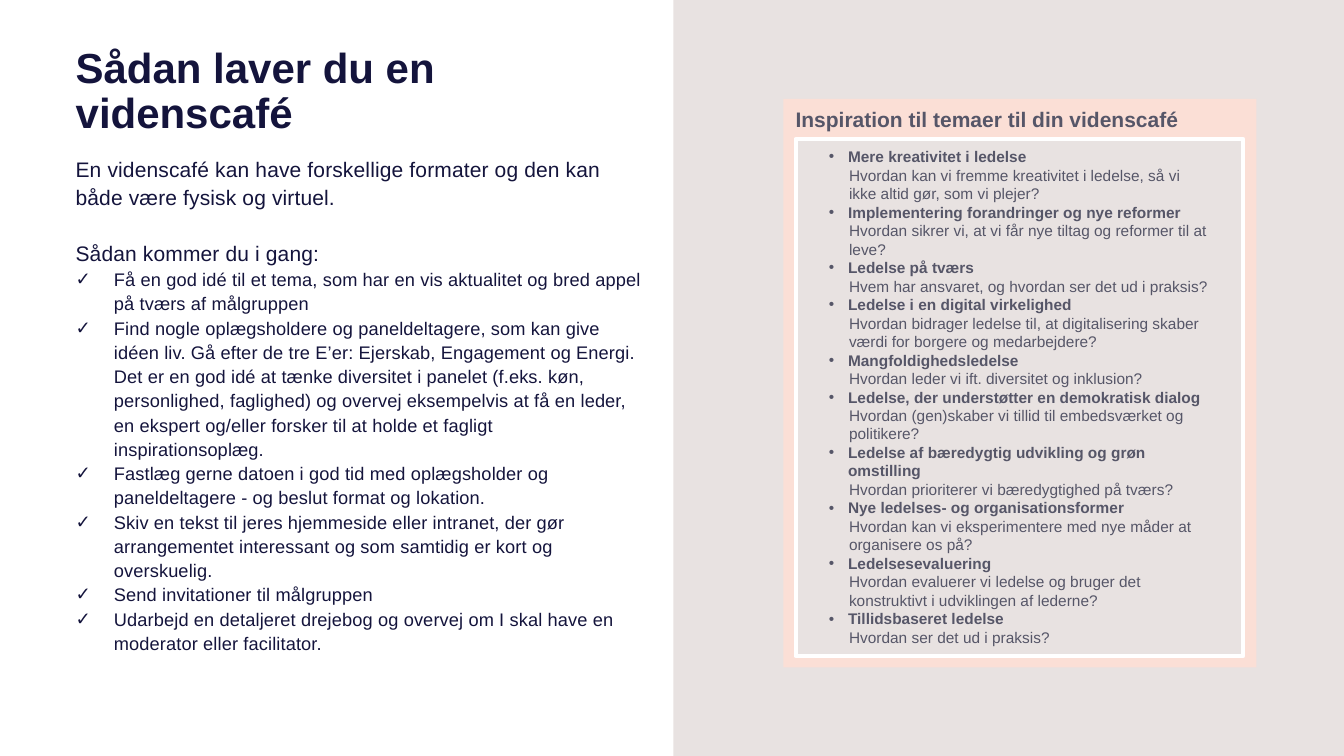
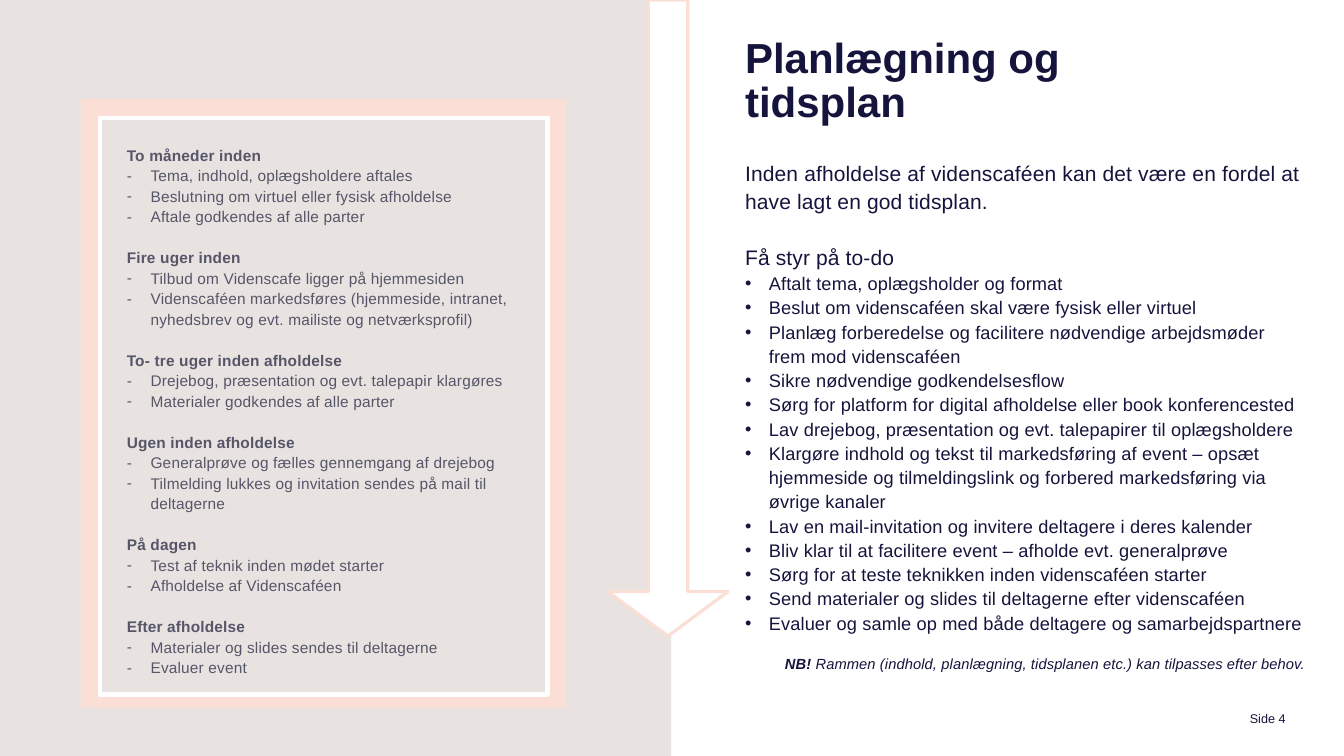
"""Build two slides on how to plan and run a knowledge café."""
from dataclasses import dataclass
from lxml.etree import SubElement
from pptx import Presentation
from pptx.dml.color import RGBColor as RGB
from pptx.enum.shapes import MSO_SHAPE as SHAPE
from pptx.enum.text import MSO_ANCHOR as ANCHOR, PP_ALIGN as ALIGN
from pptx.oxml.ns import qn
from pptx.util import Inches, Pt


@dataclass(frozen=True)
class Theme:
    font: str = "Arial"
    navy: str = "14143C"
    grey: str = "565668"
    sand: str = "E8E2E1"
    pink: str = "FBDFD6"
    white: str = "FFFFFF"
    title: float = 30
    lead: float = 15
    body: float = 13
    small: float = 11
    note: float = 10.5
    footer: float = 9
    tight: float = 0.89
    loose: float = 1.11


T = Theme()
prs = Presentation()
prs.slide_width, prs.slide_height = Inches(13.33), Inches(7.5)
COL, ROW = prs.slide_width / 100, prs.slide_height / 100


def add_box(s, at, fill=None, line=None, width=3, kind=SHAPE.RECTANGLE, inset=0):
    """Add a shape placed in hundredths of the slide."""
    x, y, w, h = at
    sp = s.shapes.add_shape(kind, round(x * COL), round(y * ROW), round(w * COL), round(h * ROW))
    sp.shadow.inherit = False
    if fill:
        sp.fill.solid()
        sp.fill.fore_color.rgb = RGB.from_string(fill)
    else:
        sp.fill.background()
    if line:
        sp.line.color.rgb = RGB.from_string(line)
        sp.line.width = Pt(width)
    else:
        sp.line.fill.background()
    tf = sp.text_frame
    tf.word_wrap = True
    tf.vertical_anchor = ANCHOR.TOP
    tf.margin_left = tf.margin_right = Inches(2 * inset)
    tf.margin_top = tf.margin_bottom = Inches(inset)
    return sp


def add_par(sp, runs, size, color=T.navy, spacing=T.loose, before=0, bullet=None,
            left=0, hang=0, align=ALIGN.LEFT, track=0):
    """Add a paragraph of (text, bold, italic) runs; indents are in columns."""
    tf = sp.text_frame
    p = tf.paragraphs[0] if not tf.paragraphs[0].runs else tf.add_paragraph()
    p.alignment, p.line_spacing = align, spacing
    if before:
        p.space_before = Pt(before)
    pPr = p._p.get_or_add_pPr()
    pPr.set("marL", str(round(left * COL)))
    pPr.set("indent", str(round(-hang * COL)))
    if bullet:
        SubElement(pPr, qn("a:buFont")).set("typeface", T.font)
        SubElement(pPr, qn("a:buChar")).set("char", bullet)
    for text, bold, italic in runs:
        r = p.add_run()
        r.text = text
        r.font.name, r.font.size = T.font, Pt(size)
        r.font.bold, r.font.italic = bold, italic
        r.font.color.rgb = RGB.from_string(color)
        if track:
            r.font._element.set("spc", str(track))


themes = [
    ("Mere kreativitet i ledelse",
     "Hvordan kan vi fremme kreativitet i ledelse, så vi ikke altid gør, som vi plejer?"),
    ("Implementering forandringer og nye reformer",
     "Hvordan sikrer vi, at vi får nye tiltag og reformer til at leve?"),
    ("Ledelse på tværs", "Hvem har ansvaret, og hvordan ser det ud i praksis?"),
    ("Ledelse i en digital virkelighed",
     "Hvordan bidrager ledelse til, at digitalisering skaber værdi for borgere og medarbejdere?"),
    ("Mangfoldighedsledelse", "Hvordan leder vi ift. diversitet og inklusion?"),
    ("Ledelse, der understøtter en demokratisk dialog",
     "Hvordan (gen)skaber vi tillid til embedsværket og politikere?"),
    ("Ledelse af bæredygtig udvikling og grøn omstilling",
     "Hvordan prioriterer vi bæredygtighed på tværs?"),
    ("Nye ledelses- og organisationsformer",
     "Hvordan kan vi eksperimentere med nye måder at organisere os på?"),
    ("Ledelsesevaluering",
     "Hvordan evaluerer vi ledelse og bruger det konstruktivt i udviklingen af lederne?"),
    ("Tillidsbaseret ledelse", "Hvordan ser det ud i praksis?"),
]
schedule = [
    ("To måneder inden", [
        "Tema, indhold, oplægsholdere aftales",
        "Beslutning om virtuel eller fysisk afholdelse",
        "Aftale godkendes af alle parter"]),
    ("Fire uger inden", [
        "Tilbud om Videnscafe ligger på hjemmesiden",
        "Videnscaféen markedsføres (hjemmeside, intranet, nyhedsbrev og evt. mailiste "
        "og netværksprofil)"]),
    ("To- tre uger inden afholdelse", [
        "Drejebog, præsentation og evt. talepapir klargøres",
        "Materialer godkendes af alle parter"]),
    ("Ugen inden afholdelse", [
        "Generalprøve og fælles gennemgang af drejebog",
        "Tilmelding lukkes og invitation sendes på mail til deltagerne"]),
    ("På dagen", [
        "Test af teknik inden mødet starter",
        "Afholdelse af Videnscaféen"]),
    ("Efter afholdelse", [
        "Materialer og slides sendes til deltagerne",
        "Evaluer event"]),
]
slides = [
    dict(title="Sådan laver du en videnscafé", title_at=(5.63, 6.27, 42.31, 13.07),
         body_at=(5.63, 20.4, 42.1, 62.4), panel=(50.1, 0, 49.9, 100),
         card=(58.29, 13.07, 35.2, 75.2), frame=(59.2, 18.4, 33.3, 68.4),
         lead="En videnscafé kan have forskellige formater og den kan både være fysisk og virtuel.",
         intro="Sådan kommer du i gang:", bullet="✓", indent=2.85,
         items=[
             "Få en god idé til et tema, som har en vis aktualitet og bred appel på tværs af målgruppen",
             "Find nogle oplægsholdere og paneldeltagere, som kan give idéen liv. Gå efter de tre "
             "E’er: Ejerskab, Engagement og Energi. Det er en god idé at tænke diversitet i panelet "
             "(f.eks. køn, personlighed, faglighed) og overvej eksempelvis at få en leder, en ekspert "
             "og/eller forsker til at holde et fagligt inspirationsoplæg.",
             "Fastlæg gerne datoen i god tid med oplægsholder og paneldeltagere - og beslut format "
             "og lokation.",
             "Skiv en tekst til jeres hjemmeside eller intranet, der gør arrangementet interessant "
             "og som samtidig er kort og overskuelig.",
             "Send invitationer til målgruppen",
             "Udarbejd en detaljeret drejebog og overvej om I skal have en moderator eller facilitator.",
         ]),
    dict(title="Planlægning og tidsplan", title_at=(55.44, 4.93, 33.75, 13.07),
         body_at=(55.44, 20.93, 41.75, 62.4), panel=(0, 0, 49.95, 100),
         card=(6, 13.07, 36.15, 80.53), frame=(7.43, 15.6, 33.3, 76.27),
         lead="Inden afholdelse af videnscaféen kan det være en fordel at have lagt en god tidsplan.",
         intro="Få styr på to-do", bullet="•", indent=1.77,
         items=[
             "Aftalt tema, oplægsholder og format",
             "Beslut om videnscaféen skal være fysisk eller virtuel",
             "Planlæg forberedelse og facilitere nødvendige arbejdsmøder frem mod videnscaféen",
             "Sikre nødvendige godkendelsesflow",
             "Sørg for platform for digital afholdelse eller book konferencested",
             "Lav drejebog, præsentation og evt. talepapirer til oplægsholdere",
             "Klargøre indhold og tekst til markedsføring af event – opsæt hjemmeside og "
             "tilmeldingslink og forbered markedsføring via øvrige kanaler",
             "Lav en mail-invitation og invitere deltagere i deres kalender",
             "Bliv klar til at facilitere event – afholde evt. generalprøve",
             "Sørg for at teste teknikken inden videnscaféen starter",
             "Send materialer og slides til deltagerne efter videnscaféen",
             "Evaluer og samle op med både deltagere og samarbejdspartnere",
         ]),
]

built = []
for d in slides:
    s = prs.slides.add_slide(prs.slide_layouts[6])
    add_box(s, d["panel"], T.sand)
    add_box(s, d["card"], T.pink)
    add_box(s, d["frame"], T.sand, T.white)
    add_par(add_box(s, d["title_at"]), [(d["title"], True, False)], T.title, spacing=T.tight)
    body = add_box(s, d["body_at"])
    add_par(body, [(d["lead"], False, False)], T.lead, track=10)
    add_par(body, [(d["intro"], False, False)], T.lead, before=20, track=10)
    for item in d["items"]:
        add_par(body, [(item, False, False)], T.body, bullet=d["bullet"],
                left=d["indent"], hang=d["indent"], track=10)
    built.append((s, body))

(cafe, _), (plan, todo) = built

heading = add_box(cafe, (59.2, 13.73, 32.5, 3.73))
add_par(heading, [("Inspiration til temaer til din videnscafé", True, False)], T.lead, T.grey)
ideas = add_box(cafe, (60.17, 19.47, 30, 66.67), T.sand)
for name, question in themes:
    add_par(ideas, [(name, True, False)], T.small, T.grey, 1, bullet="•", left=2.93, hang=1.43)
    add_par(ideas, [(question, False, False)], T.small, T.grey, 1, left=3)

add_par(todo, [("NB! ", True, True),
               ("Rammen (indhold, planlægning, tidsplanen etc.) kan tilpasses efter behov.", False, True)],
        T.note, before=14, align=ALIGN.RIGHT, track=10)
steps = add_box(plan, (8.7, 18.4, 31.43, 69.73), T.sand, inset=0.05)
for i, (when, tasks) in enumerate(schedule):
    add_par(steps, [(when, True, False)], T.small, T.grey, before=14.6 if i else 0, track=10)
    for task in tasks:
        add_par(steps, [(task, False, False)], T.small, T.grey, bullet="-",
                left=1.77, hang=1.77, track=10)
arrow = add_box(plan, (45.24, 0, 8.93, 84.13), T.white, T.pink, 2.25, SHAPE.DOWN_ARROW)
arrow.adjustments[0], arrow.adjustments[1] = 0.33, 0.37
footer = add_box(plan, (82.9, 93.6, 12.75, 2.4))
footer.text_frame.vertical_anchor = ANCHOR.BOTTOM
add_par(footer, [("Side 4", False, False)], T.footer, spacing=1, align=ALIGN.RIGHT)

prs.save("out.pptx")
